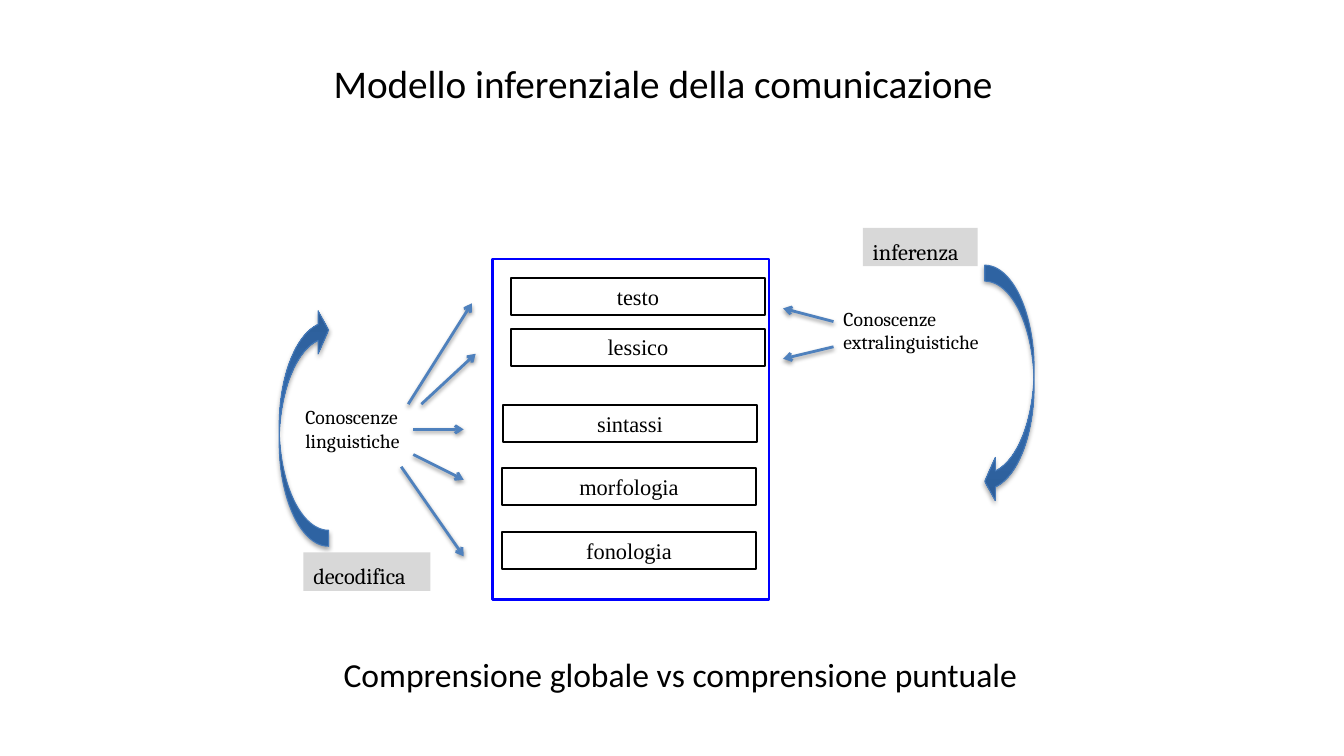
from pptx import Presentation
from pptx.dml.color import RGBColor
from pptx.enum.shapes import MSO_CONNECTOR, MSO_SHAPE
from pptx.enum.text import MSO_ANCHOR, MSO_AUTO_SIZE, PP_ALIGN
from pptx.oxml.ns import qn
from pptx.util import Pt
from lxml.etree import SubElement
from copy import deepcopy

COLORS = {"text": "000000", "frame": "0000FF", "arrow": "4F81BD",
          "edge": "4579B8", "label": "D8D8D8", "shadow": "000000"}
GRADIENT = [(0, "3A7CCB"), (0.2, "3C7BC7"), (1, "2C5D98")]
CURVE_ADJUSTMENTS = (0.324, 0.874, 0.214)

ROW_SIZE = (181.4, 26.6)
ROWS = [("testo", 365, 198.7), ("lessico", 365, 234.7), ("sintassi", 359.3, 289.4),
        ("morfologia", 358.6, 334.1), ("fonologia", 358.6, 380.2)]
KNOWLEDGE = [("Conoscenze linguistiche", (211, 282.2, 98.6, 54)),
             ("Conoscenze extralinguistiche", (595.4, 211.7, 133.2, 54))]
ARROWS = [((291.6, 288.7), (337, 216.7)), ((301, 288.7), (339.8, 252.7)),
          ((295.2, 306.7), (331.2, 306.7)), ((295.2, 324.7), (331.2, 342.7)),
          ((286.6, 333.4), (331.2, 397.4)), ((595.4, 229.7), (559.4, 220.3)),
          ((595.4, 247.7), (559.4, 256.3))]
CURVES = [((703.4, 189.4, 35.3, 169.9), 0), ((199.4, 220.3, 35.3, 169.9), 180)]
LABELS = [("decodifica", (216.7, 394.6, 90.7, 27.4)),
          ("inferenza", (616.3, 162.7, 82.1, 27.4))]


def rgb(name):
    return RGBColor.from_string(COLORS[name])


class SlideBuilder:
    def __init__(self, prs):
        self.s = prs.slides.add_slide(prs.slide_layouts[5])

    def put_text(self, sp, text, size, font, inset=None, align=PP_ALIGN.LEFT, **frame):
        tf = sp.text_frame
        values = {"word_wrap": True, "vertical_anchor": MSO_ANCHOR.TOP,
                  "auto_size": MSO_AUTO_SIZE.NONE} | frame
        if inset is not None:
            for side in ("left", "top", "right", "bottom"):
                values[f"margin_{side}"] = Pt(inset)
        for key, value in values.items():
            setattr(tf, key, value)
        p = tf.paragraphs[0]
        p.alignment = align
        r = p.add_run()
        r.text = text
        for key, value in {"size": Pt(size), "name": font}.items():
            setattr(r.font, key, value)
        r.font.color.rgb = rgb("text")

    def title(self, text, box, size):
        sp = self.s.shapes.title
        for key, value in zip(("left", "top", "width", "height"), box):
            setattr(sp, key, Pt(value))
        self.put_text(sp, text, size, "Calibri", word_wrap=False,
                      auto_size=MSO_AUTO_SIZE.SHAPE_TO_FIT_TEXT)

    def text(self, text, box, size, font, **style):
        self.put_text(self.s.shapes.add_textbox(*map(Pt, box)), text, size, font, **style)

    def shape(self, kind, box, fill=None, line=None, width=1):
        sp = self.s.shapes.add_shape(kind, *map(Pt, box))
        sp.shadow.inherit = False
        if fill:
            sp.fill.solid()
            sp.fill.fore_color.rgb = rgb(fill)
        else:
            sp.fill.background()
        if line:
            sp.line.color.rgb = rgb(line)
            sp.line.width = Pt(width)
        else:
            sp.line.fill.background()
        return sp

    def shadow(self, effects, distance, opacity):
        """Add a soft shadow falling straight down to an a:effectLst."""
        outer = SubElement(effects, qn("a:outerShdw"), blurRad=str(Pt(3.1)),
                           dist=str(Pt(distance)), dir="5400000", rotWithShape="0")
        color = SubElement(outer, qn("a:srgbClr"), val=COLORS["shadow"])
        SubElement(color, qn("a:alpha"), val=str(opacity * 1000))

    def arrow(self, start, end):
        cxn = self.s.shapes.add_connector(MSO_CONNECTOR.STRAIGHT, *map(Pt, start + end))
        cxn.line.color.rgb = rgb("arrow")
        cxn.line.width = Pt(2)
        spPr = cxn._element.spPr
        SubElement(spPr.find(qn("a:ln")), qn("a:tailEnd"), type="arrow")
        self.shadow(SubElement(spPr, qn("a:effectLst")), 1.6, 38)

    def curve(self, box, rotation):
        sp = self.shape(MSO_SHAPE.CURVED_LEFT_ARROW, box, line="edge", width=0.75)
        sp.rotation = rotation
        for i, value in enumerate(CURVE_ADJUSTMENTS):
            sp.adjustments[i] = value
        sp.fill.gradient()
        sp.fill.gradient_angle = 270
        spPr = sp._element.spPr
        stops = spPr.find(qn("a:gradFill")).find(qn("a:gsLst"))
        stops.append(deepcopy(stops[0]))
        for stop, (position, color) in zip(sp.fill.gradient_stops, GRADIENT):
            stop.position = position
            stop.color.rgb = RGBColor.from_string(color)
        self.shadow(spPr.find(qn("a:effectLst")), 1.8, 35)


def main():
    prs = Presentation()
    prs.slide_width, prs.slide_height = Pt(960), Pt(540)
    b = SlideBuilder(prs)
    b.title("Modello inferenziale della comunicazione", (231.1, 38.9, 489.6, 41), 28)
    for name, left, top in ROWS:
        sp = b.shape(MSO_SHAPE.RECTANGLE, (left, top, *ROW_SIZE), line="text", width=1.5)
        b.put_text(sp, name, 16, "Times New Roman", align=PP_ALIGN.CENTER,
                   auto_size=MSO_AUTO_SIZE.SHAPE_TO_FIT_TEXT)
    b.shape(MSO_SHAPE.RECTANGLE, (352.1, 185, 197.3, 243.4), line="frame", width=2)
    for name, box in KNOWLEDGE:
        b.text(name, box, 14, "Cambria", inset=7.2)
    for start, end in ARROWS:
        b.arrow(start, end)
    for box, rotation in CURVES:
        b.curve(box, rotation)
    for name, box in LABELS:
        sp = b.shape(MSO_SHAPE.RECTANGLE, box, fill="label")
        b.put_text(sp, name, 16, "Cambria", inset=7.2)
    b.text("Comprensione globale vs comprensione puntuale", (238.3, 463.7, 500.4, 36),
           24, "Calibri", word_wrap=False, auto_size=MSO_AUTO_SIZE.SHAPE_TO_FIT_TEXT)
    prs.save("out.pptx")


if __name__ == "__main__":
    main()
